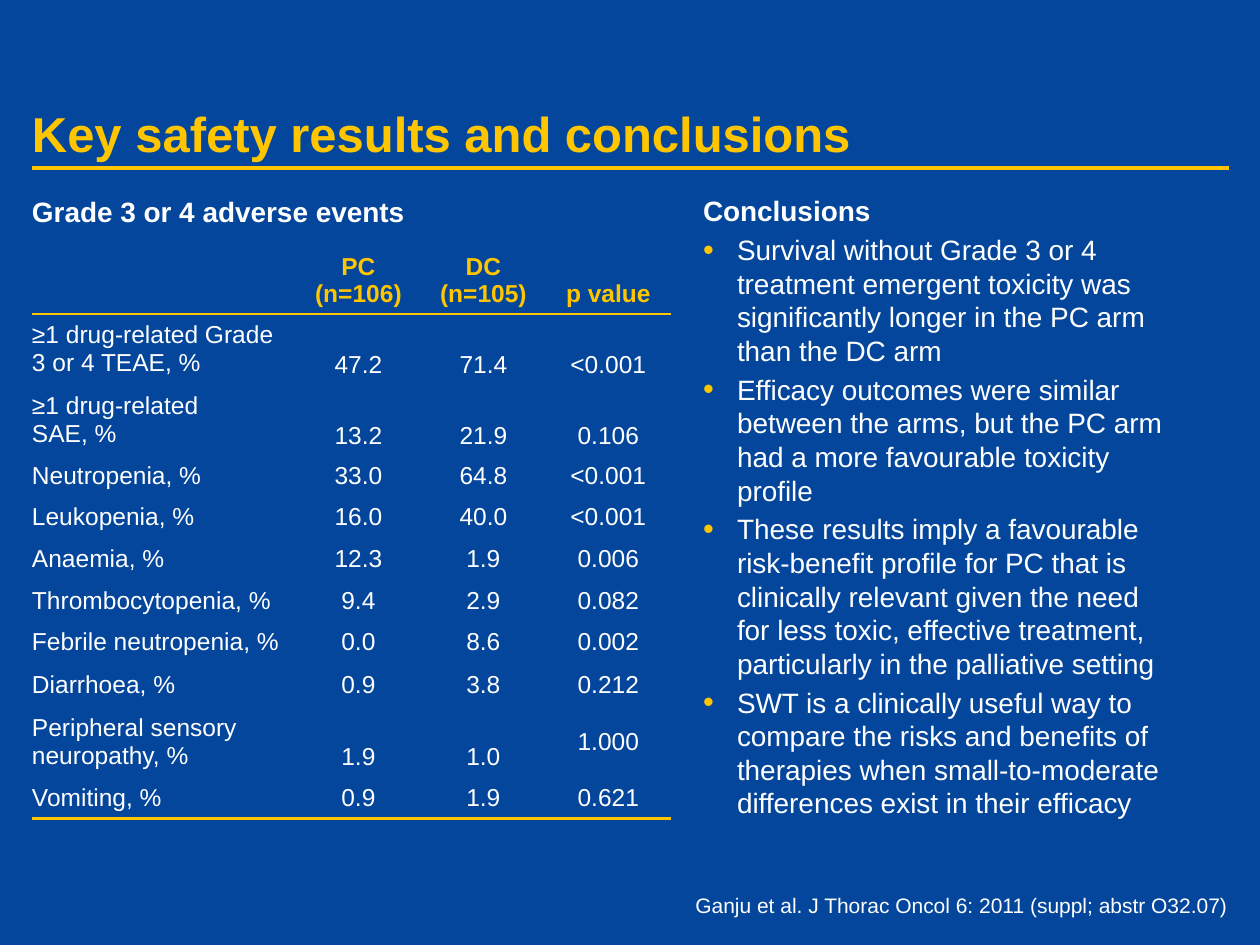
from lxml import etree
from pptx import Presentation
from pptx import util as u
from pptx.dml.color import RGBColor
from pptx.enum import shapes, text
from pptx.oxml.ns import qn

EMU_PER_PX = 914400 / 126
COLORS = {"background": "03469C", "accent": "FFC600", "body": "FFFFFF"}
TOP, MIDDLE, BOTTOM = text.MSO_ANCHOR.TOP, text.MSO_ANCHOR.MIDDLE, text.MSO_ANCHOR.BOTTOM
LEFT, CENTER, RIGHT = text.PP_ALIGN.LEFT, text.PP_ALIGN.CENTER, text.PP_ALIGN.RIGHT

COLUMN_WIDTHS = [264, 125, 125, 125]
TALL = 67
ADVERSE_EVENTS = [
    (TALL, ["", "PC\n(n=106)", "DC\n(n=105)", "p value"]),
    (TALL, ["≥1 drug-related Grade 3 or 4 TEAE, %", "47.2", "71.4", "<0.001"]),
    (TALL, ["≥1 drug-related \nSAE, %", "13.2", "21.9", "0.106"]),
    (40, ["Neutropenia, %", "33.0", "64.8", "<0.001"]),
    (40, ["Leukopenia, %", "16.0", "40.0", "<0.001"]),
    (40, ["Anaemia, %", "12.3", "1.9", "0.006"]),
    (42, ["Thrombocytopenia, %", "9.4", "2.9", "0.082"]),
    (42, ["Febrile neutropenia, %", "0.0", "8.6", "0.002"]),
    (43, ["Diarrhoea, %", "0.9", "3.8", "0.212"]),
    (TALL, ["Peripheral sensory neuropathy, %", "1.9", "1.0", "1.000"]),
    (40, ["Vomiting, %", "0.9", "1.9", "0.621"]),
]
CENTERED_VALUE = "1.000"
CONCLUSIONS = [
    "Survival without Grade 3 or 4 treatment emergent toxicity was significantly "
    "longer in the PC arm than the DC arm",
    "Efficacy outcomes were similar between the arms, but the PC arm had a more "
    "favourable toxicity profile",
    "These results imply a favourable risk-benefit profile for PC that is clinically "
    "relevant given the need for less toxic, effective treatment, particularly in "
    "the palliative setting",
    "SWT is a clinically useful way to compare the risks and benefits of therapies "
    "when small-to-moderate differences exist in their efficacy",
]


def px(length):
    return u.Emu(round(length * EMU_PER_PX))


def rgb(color):
    return RGBColor.from_string(COLORS[color])


class SlideBuilder:
    font = "Arial"

    def __init__(self, slide):
        self.slide = slide
        fill = slide.background.fill
        fill.solid()
        fill.fore_color.rgb = rgb("background")

    def add_text(self, paragraph, content, size, color="body", bold=False, align=LEFT):
        paragraph.alignment = align
        for index, line in enumerate(content.split("\n")):
            if index:
                paragraph.add_line_break()
            run = paragraph.add_run()
            run.text = line
            run.font.name = self.font
            run.font.size = u.Pt(size)
            run.font.bold = bold
            run.font.color.rgb = rgb(color)

    def textbox(self, box, insets, anchor=TOP):
        """Add a wrapping text frame; insets are left, top, right, bottom."""
        frame = self.slide.shapes.add_textbox(*map(px, box)).text_frame
        frame.word_wrap = True
        frame.vertical_anchor = anchor
        (frame.margin_left, frame.margin_top,
         frame.margin_right, frame.margin_bottom) = map(px, insets)
        return frame

    def label(self, box, content, size, insets=(13, 6, 13, 6), anchor=TOP, **style):
        frame = self.textbox(box, insets, anchor)
        self.add_text(frame.paragraphs[0], content, size, **style)

    def rule(self, left, right, y, width):
        line = self.slide.shapes.add_connector(
            shapes.MSO_CONNECTOR.STRAIGHT, px(left), px(y), px(right), px(y))
        line.line.color.rgb = rgb("accent")
        line.line.width = u.Pt(width)
        etree.SubElement(line._element.spPr, qn("a:effectLst"))

    def bullet_list(self, box, heading, items, size):
        frame = self.textbox(box, (0, 6, 0, 6))
        self.add_text(frame.paragraphs[0], heading, size, bold=True)
        frame.paragraphs[0].space_before = u.Pt(3)
        for item in items:
            paragraph = frame.add_paragraph()
            self.add_text(paragraph, item, size)
            paragraph.space_before = u.Pt(3)
            self.bullet(paragraph, 34)

    def bullet(self, paragraph, indent):
        props = paragraph._p.get_or_add_pPr()
        props.set("marL", str(px(indent)))
        props.set("indent", str(-px(indent)))
        color = etree.SubElement(props, qn("a:buClr"))
        etree.SubElement(color, qn("a:srgbClr"), val=COLORS["accent"])
        etree.SubElement(props, qn("a:buSzPct"), val="110000")
        etree.SubElement(props, qn("a:buFont"), typeface=self.font)
        etree.SubElement(props, qn("a:buChar"), char="•")

    def borders(self, cell, ruled):
        """Draw accent lines on the ruled sides and none on the others."""
        props = cell._tc.get_or_add_tcPr()
        for side in "LRTB":
            line = etree.SubElement(props, qn(f"a:ln{side}"), w=str(u.Pt(1.5)))
            if side in ruled:
                fill = etree.SubElement(line, qn("a:solidFill"))
                etree.SubElement(fill, qn("a:srgbClr"), val=COLORS["accent"])
            else:
                etree.SubElement(line, qn("a:noFill"))

    def table(self, left, top, widths, rows, size):
        heights = [height for height, _ in rows]
        table = self.slide.shapes.add_table(
            len(rows), len(widths), px(left), px(top),
            px(sum(widths)), px(sum(heights))).table
        table.first_row = table.horz_banding = False
        for column, width in zip(table.columns, widths):
            column.width = px(width)
        ruled_sides = {0: "B", 1: "T", len(rows) - 1: "B"}
        for r, (height, values) in enumerate(rows):
            table.rows[r].height = px(height)
            for c, value in enumerate(values):
                cell = table.cell(r, c)
                self.borders(cell, ruled_sides.get(r, ""))
                cell.fill.background()
                cell.margin_left = px(6 if c else 0)
                cell.margin_right = cell.margin_top = cell.margin_bottom = px(6)
                bottom = c and height == TALL and value != CENTERED_VALUE
                cell.vertical_anchor = BOTTOM if bottom else MIDDLE
                if value:
                    self.add_text(cell.text_frame.paragraphs[0], value, size,
                                  color="body" if r else "accent", bold=r == 0,
                                  align=CENTER if c else LEFT)


def main():
    deck = Presentation()
    deck.slide_width, deck.slide_height = px(1260), px(945)
    builder = SlideBuilder(deck.slides.add_slide(deck.slide_layouts[6]))

    builder.rule(32, 1229, 168, 2.25)
    builder.label((32, 32, 1197, 130), "Key safety results and conclusions", 28,
                  insets=(0, 6, 0, 0), anchor=BOTTOM, color="accent", bold=True)
    builder.bullet_list((703, 188, 475, 658), "Conclusions", CONCLUSIONS, 16)
    builder.label((19, 189, 525, 43), "Grade 3 or 4 adverse events", 16, bold=True)
    builder.table(32, 243, COLUMN_WIDTHS, ADVERSE_EVENTS, 14)
    builder.label((611, 887, 630, 38),
                  "Ganju et al. J Thorac Oncol 6: 2011 (suppl; abstr O32.07)", 12,
                  align=RIGHT)
    deck.save("out.pptx")


if __name__ == "__main__":
    main()
